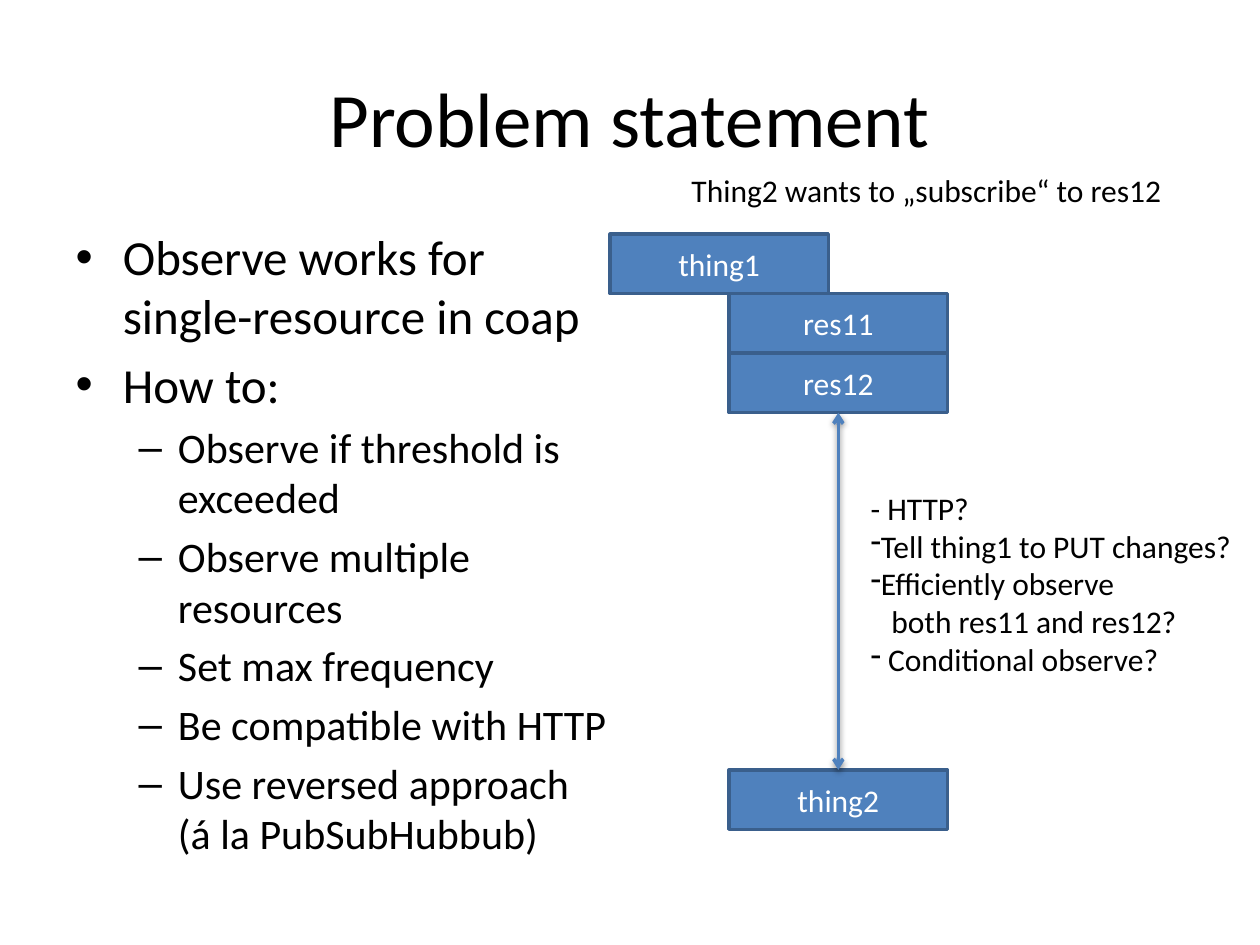
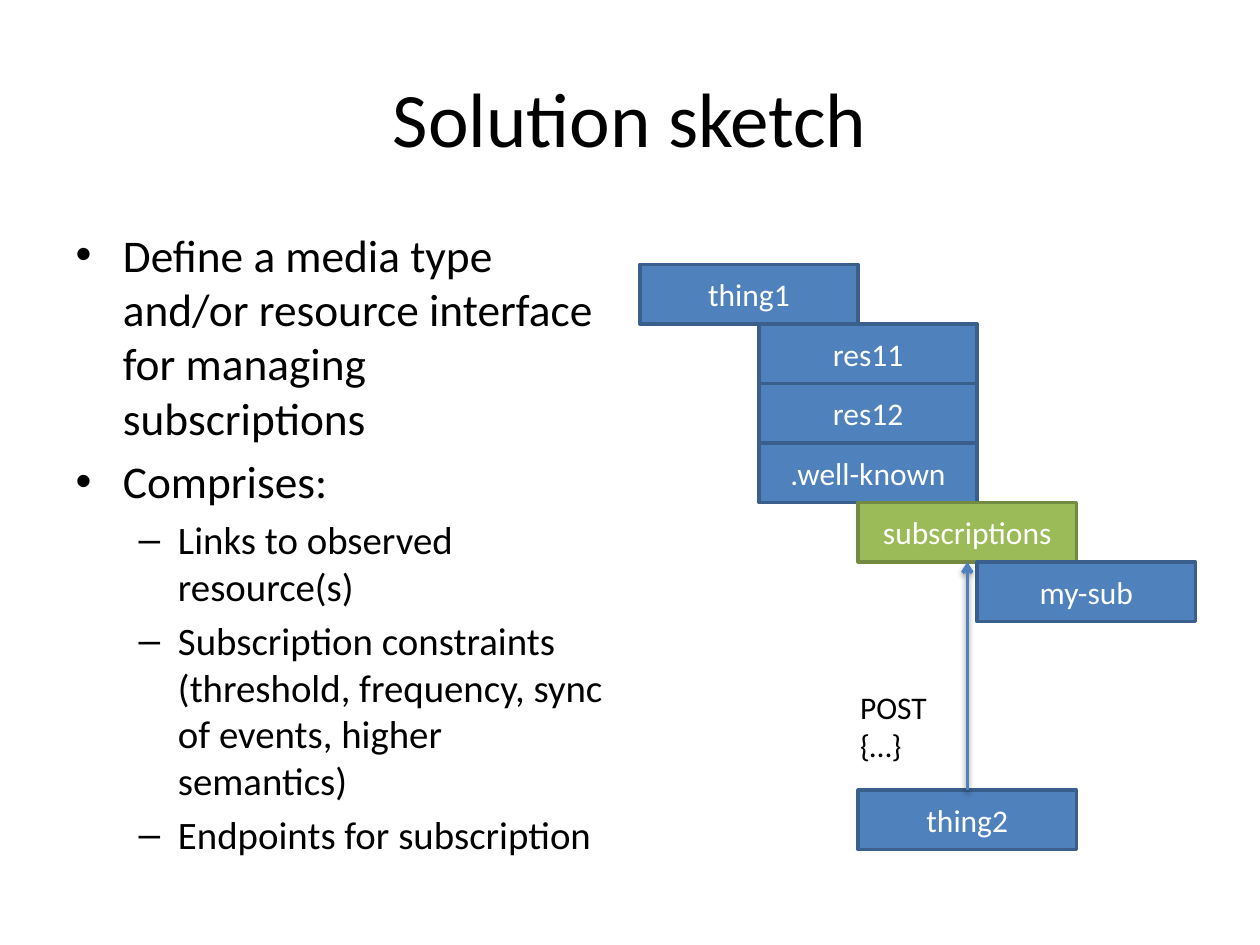
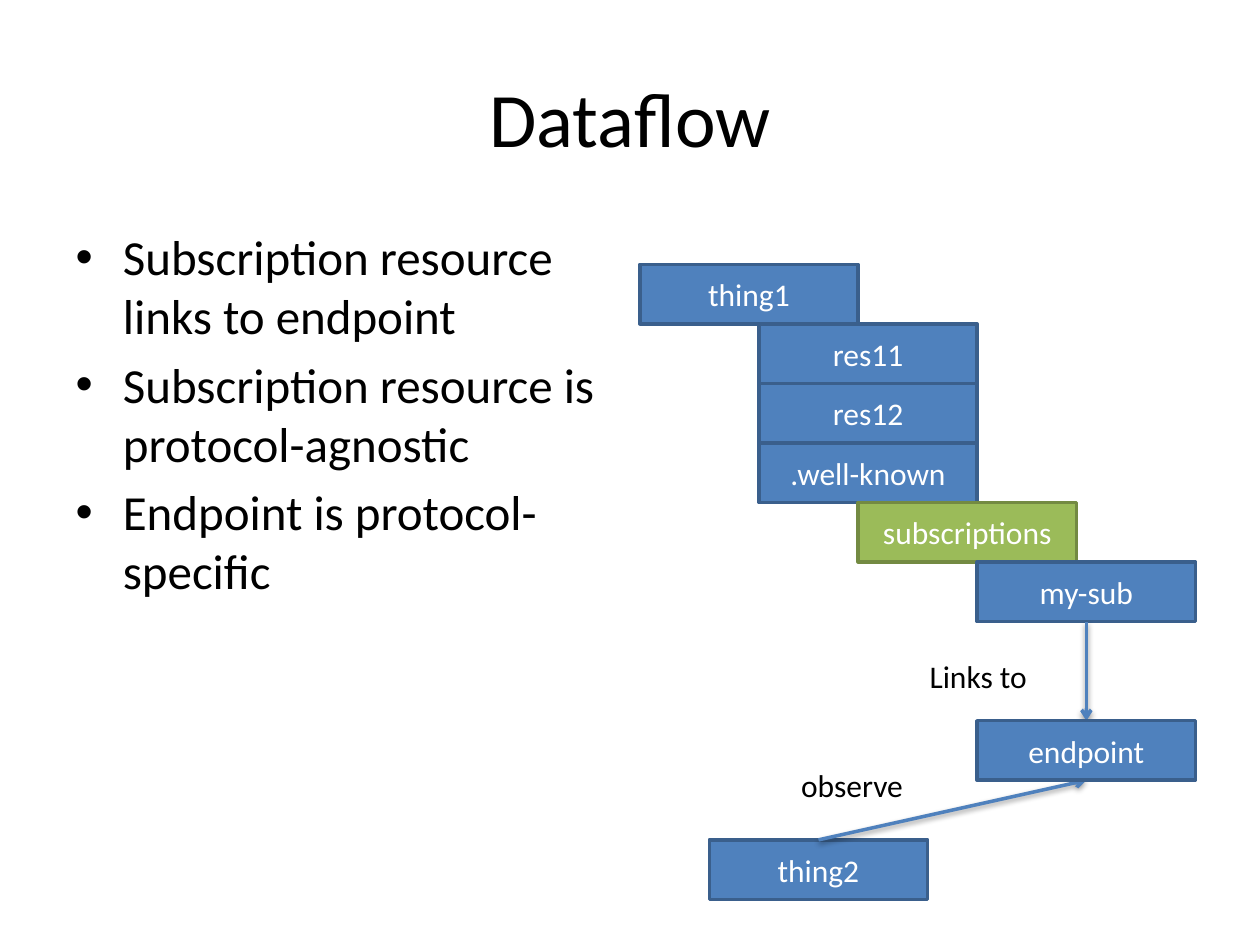
from dataclasses import dataclass

from lxml import etree
from pptx import Presentation
from pptx.dml.color import RGBColor
from pptx.enum.shapes import MSO_CONNECTOR, MSO_SHAPE
from pptx.enum.text import MSO_ANCHOR, MSO_AUTO_SIZE, PP_ALIGN
from pptx.oxml.ns import qn
from pptx.util import Cm, Pt

RECTANGLE = MSO_SHAPE.RECTANGLE
STRAIGHT = MSO_CONNECTOR.STRAIGHT
MIDDLE = MSO_ANCHOR.MIDDLE
CENTER = PP_ALIGN.CENTER
NO_AUTOFIT = MSO_AUTO_SIZE.NONE

BLACK = RGBColor(0x00, 0x00, 0x00)
WHITE = RGBColor(0xFF, 0xFF, 0xFF)
BLUE = RGBColor(0x4F, 0x81, 0xBD)
DARK_BLUE = RGBColor(0x3A, 0x5F, 0x8C)
GREEN = RGBColor(0x9B, 0xBB, 0x59)
DARK_GREEN = RGBColor(0x73, 0x8A, 0x42)

FONT = "Calibri"
TITLE_SIZE = 44
LABEL_SIZE = 18
LINE_WIDTH = Pt(2)
TWO_CONTENT = 3
BOX_WIDTH, BOX_HEIGHT = 4.4, 1.2
RESOURCE_STEP, SUBSCRIPTIONS_STEP, MY_SUB_STEP = 2.4, 4.4, 6.8
TOP_SIDE, BOTTOM_SIDE = 0, 2


@dataclass(frozen=True)
class Box:
    """A labelled box; left and top in centimetres."""
    name: str
    left: float
    top: float
    fill: RGBColor = BLUE
    line: RGBColor = DARK_BLUE


@dataclass(frozen=True)
class Link:
    """An arrow between the sides of two named boxes."""
    start: str
    start_side: int
    end: str
    end_side: int
    both_ways: bool = False


@dataclass(frozen=True)
class NoteLine:
    text: str
    bullet: bool = False
    indent: float = 0


@dataclass(frozen=True)
class Note:
    """Free text; lengths in centimetres."""
    left: float
    top: float
    width: float
    height: float
    lines: tuple[NoteLine, ...]
    wrap: bool = False


@dataclass(frozen=True)
class Page:
    title: str
    bullets: tuple[tuple[int, str], ...]
    boxes: tuple[Box, ...]
    links: tuple[Link, ...]
    notes: tuple[Note, ...]
    sizes: tuple[float, float] = (28, 24)
    front: tuple[str, ...] = ()


def resource_stack(left: float, top: float, *names: str) -> tuple[Box, ...]:
    """thing1 with its resources stepped in below it."""
    resources = (Box(name, left + RESOURCE_STEP, top + row * BOX_HEIGHT)
                 for row, name in enumerate(names, 1))
    return Box("thing1", left, top), *resources


def subscription_stack(left: float, top: float) -> tuple[Box, ...]:
    return (
        *resource_stack(left, top, "res11", "res12", ".well-known"),
        Box("subscriptions", left + SUBSCRIPTIONS_STEP, top + 4 * BOX_HEIGHT,
            GREEN, DARK_GREEN),
        Box("my-sub", left + MY_SUB_STEP, top + 5 * BOX_HEIGHT),
    )


PAGES = (
    Page(
        "Problem statement",
        ((0, "Observe works for single-resource in coap"),
         (0, "How to:"),
         (1, "Observe if threshold is exceeded"),
         (1, "Observe multiple resources"),
         (1, "Set max frequency"),
         (1, "Be compatible with HTTP"),
         (1, "Use reversed approach (á la PubSubHubbub)")),
        (*resource_stack(12.3, 4.72, "res11", "res12"),
         Box("thing2", 14.7, 15.52)),
        (Link("thing2", TOP_SIDE, "res12", BOTTOM_SIDE, both_ways=True),),
        (Note(13.69, 3.33, 10.08, 1.02,
              (NoteLine("Thing2 wants to „subscribe“ to res12"),)),
         Note(17.3, 9.73, 8.1, 4.11,
              (NoteLine("- HTTP?"),
               NoteLine("Tell thing1 to PUT changes?", bullet=True),
               NoteLine("Efficiently observe", bullet=True),
               NoteLine("both res11 and res12?", indent=0.42),
               NoteLine(" Conditional observe?", bullet=True)), wrap=True)),
    ),
    Page(
        "Solution sketch",
        ((0, "Define a media type and/or resource interface for managing "
             "subscriptions"),
         (0, "Comprises:"),
         (1, "Links to observed resource(s)"),
         (1, "Subscription constraints (threshold, frequency, sync of events, "
             "higher semantics)"),
         (1, "Endpoints for subscription")),
        (*subscription_stack(12.9, 5.33), Box("thing2", 17.3, 15.93)),
        (Link("thing2", TOP_SIDE, "subscriptions", BOTTOM_SIDE),),
        (Note(17.09, 13.74, 2.01, 1.8, (NoteLine("POST"), NoteLine("{…}"))),),
        sizes=(25.9, 22.2),
    ),
    Page(
        "Dataflow",
        ((0, "Subscription resource links to endpoint"),
         (0, "Subscription resource is protocol-agnostic"),
         (0, "Endpoint is protocol-specific")),
        (*subscription_stack(12.9, 5.33),
         Box("endpoint", 19.7, 14.53),
         Box("thing2", 14.3, 16.93)),
        (Link("thing2", TOP_SIDE, "endpoint", BOTTOM_SIDE),
         Link("my-sub", BOTTOM_SIDE, "endpoint", TOP_SIDE)),
        (Note(15.9, 15.32, 2.59, 1.02, (NoteLine("observe"),)),
         Note(18.49, 13.13, 2.49, 1.02, (NoteLine("Links to"),))),
        front=("endpoint",),
    ),
)


def set_font(p, size: float, color: RGBColor = BLACK) -> None:
    p.font.name = FONT
    p.font.size = Pt(size)
    p.font.color.rgb = color


def fill_placeholders(slide, page: Page) -> None:
    title, body, spare = slide.placeholders
    spare.element.getparent().remove(spare.element)
    title.text_frame.text = page.title
    set_font(title.text_frame.paragraphs[0], TITLE_SIZE)
    tf = body.text_frame
    tf.text = "\n".join(text for _, text in page.bullets)
    tf.auto_size = NO_AUTOFIT
    for p, (level, _) in zip(tf.paragraphs, page.bullets):
        p.level = level
        set_font(p, page.sizes[level])


def add_box(slide, box: Box):
    sp = slide.shapes.add_shape(RECTANGLE, Cm(box.left), Cm(box.top),
                                Cm(BOX_WIDTH), Cm(BOX_HEIGHT))
    sp.shadow.inherit = False
    sp.fill.solid()
    sp.fill.fore_color.rgb = box.fill
    sp.line.color.rgb = box.line
    sp.line.width = LINE_WIDTH
    tf = sp.text_frame
    tf.text = box.name
    tf.vertical_anchor = MIDDLE
    p = tf.paragraphs[0]
    p.alignment = CENTER
    set_font(p, LABEL_SIZE, WHITE)
    return sp


def add_link(slide, link: Link, shapes: dict) -> None:
    """Join two boxes; the soft shadow comes from the theme."""
    connector = slide.shapes.add_connector(STRAIGHT, 0, 0, 0, 0)
    connector.begin_connect(shapes[link.start], link.start_side)
    connector.end_connect(shapes[link.end], link.end_side)
    connector.line.color.rgb = BLUE
    connector.line.width = LINE_WIDTH
    ln = connector.element.spPr.find(qn("a:ln"))
    for tag in ("a:headEnd", "a:tailEnd") if link.both_ways else ("a:tailEnd",):
        etree.SubElement(ln, qn(tag), type="arrow")


def add_note(slide, note: Note) -> None:
    sp = slide.shapes.add_textbox(Cm(note.left), Cm(note.top),
                                  Cm(note.width), Cm(note.height))
    tf = sp.text_frame
    tf.word_wrap = note.wrap
    tf.text = "\n".join(line.text for line in note.lines)
    for p, line in zip(tf.paragraphs, note.lines):
        set_font(p, LABEL_SIZE)
        pPr = p._p.get_or_add_pPr()
        if line.indent:
            pPr.set("marL", str(Cm(line.indent)))
        if line.bullet:
            bullet = etree.Element(qn("a:buChar"), char="-")
            pPr.insert(0, bullet)


def add_page(prs, page: Page) -> None:
    slide = prs.slides.add_slide(prs.slide_layouts[TWO_CONTENT])
    fill_placeholders(slide, page)
    shapes = {box.name: add_box(slide, box) for box in page.boxes}
    for link in page.links:
        add_link(slide, link, shapes)
    for name in page.front:
        sp = shapes[name].element
        sp.getparent().append(sp)
    for note in page.notes:
        add_note(slide, note)


def main() -> None:
    prs = Presentation()
    prs.slide_width, prs.slide_height = Cm(25.4), Cm(19.05)
    for page in PAGES:
        add_page(prs, page)
    prs.save("out.pptx")


if __name__ == "__main__":
    main()
